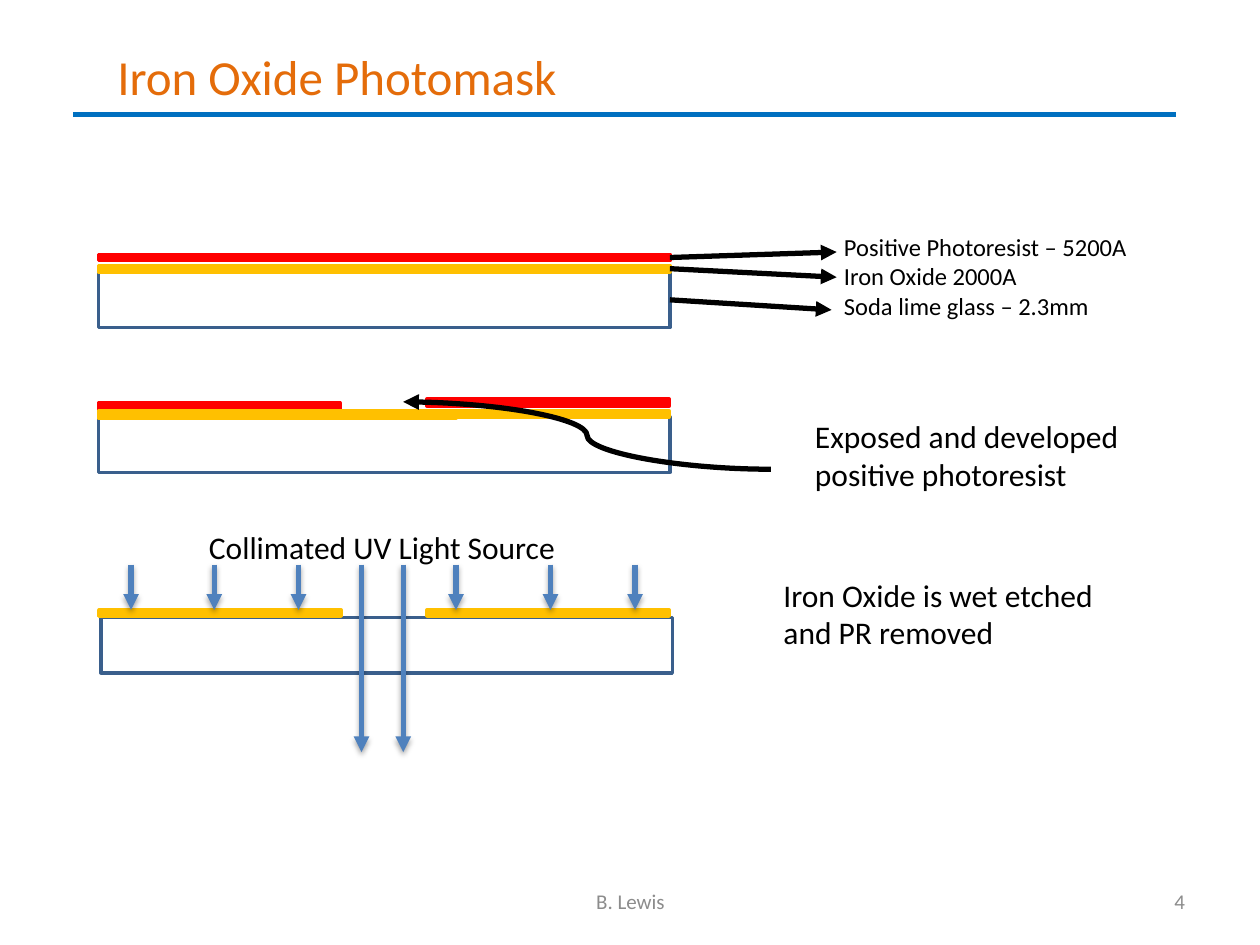
from dataclasses import dataclass

import pptx
import pptx.dml.color
import pptx.enum.shapes
import pptx.enum.text
import pptx.oxml
import pptx.oxml.ns
import pptx.util

Pt = pptx.util.Pt
Align = pptx.enum.text.PP_ALIGN
Anchor = pptx.enum.text.MSO_ANCHOR
Connector = pptx.enum.shapes.MSO_CONNECTOR
RECTANGLE = pptx.enum.shapes.MSO_SHAPE.RECTANGLE
RIGHT_SIDE = 3


@dataclass(frozen=True)
class Theme:
    font: str = "Calibri"
    title: str = "E46C0A"
    rule: str = "0070C0"
    text: str = "000000"
    muted: str = "8C8C8C"
    glass: str = "FFFFFF"
    glass_edge: str = "3A5F8C"
    resist: str = "FF0000"
    oxide: str = "FFC000"
    light: str = "4F81BD"
    title_size: int = 28
    note_size: int = 18
    label_size: int = 14
    footer_size: int = 12
    edge_width: int = 2
    line_width: int = 3


THEME = Theme()


@dataclass(frozen=True)
class Layer:
    left: float
    top: float
    width: float
    height: float
    fill: str
    edge: str


@dataclass(frozen=True)
class Note:
    lines: tuple[str, ...]
    left: float
    top: float
    width: float
    height: float
    size: int = THEME.note_size
    color: str = THEME.text
    align: Align = Align.LEFT
    anchor: Anchor = Anchor.TOP
    wrap: bool = True


@dataclass(frozen=True)
class Line:
    start: tuple[float, float]
    end: tuple[float, float]
    color: str = THEME.text
    kind: Connector = Connector.STRAIGHT
    arrow: bool = True
    shadow: bool = False


LEFT, WIDTH = 56.2, 326.6
RIGHT_PART, PART_WIDTH = 244.1, 138.3
GLASS_HEIGHT, FILM = 31.7, 3.7


def glass(left: float, top: float) -> Layer:
    return Layer(left, top, WIDTH, GLASS_HEIGHT, THEME.glass, THEME.glass_edge)


def film(left: float, top: float, width: float, color: str, height: float = FILM) -> Layer:
    return Layer(left, top, width, height, color, color)


BLANK_GLASS = glass(LEFT, 155.5)
BLANK_RESIST = film(LEFT, 145.3, WIDTH, THEME.resist)
BLANK_OXIDE = film(LEFT, 151.7, WIDTH, THEME.oxide)
LABEL_ARROWS = (
    (BLANK_GLASS, (475.2, 177.1)),
    (BLANK_OXIDE, (478.1, 158.4)),
    (BLANK_RESIST, (478.1, 144)),
)
ETCHED_MASK = (
    glass(57.6, 352.8),
    film(56.7, 348.5, PART_WIDTH, THEME.oxide),
    film(RIGHT_PART, 348.5, PART_WIDTH, THEME.oxide),
)
DEVELOPED_MASK = (
    glass(LEFT, 238.3),
    film(RIGHT_PART, 228, PART_WIDTH, THEME.resist, 4.2),
    film(RIGHT_PART, 234.7, PART_WIDTH, THEME.oxide),
    film(LEFT, 230.4, PART_WIDTH, THEME.resist),
    film(LEFT, 234.7, 204.5, THEME.oxide, 4.2),
)

LIGHT_TOP, MASK_TOP, BELOW_MASK = 322.6, 348.5, 429.8
PASSING_RAYS = (206.6, 230.4)
BLOCKED_RAYS = (74.9, 122.4, 170.6, 260.6, 314.6, 362.9)

NOTES = (
    Note(("Positive Photoresist – 5200A", "Iron Oxide 2000A", "Soda lime glass – 2.3mm"),
         475.2, 128.9, 192.2, 58.3, THEME.label_size),
    Note(("Collimated UV Light Source",), 112.3, 298.1, 214.6, 29, wrap=False),
    Note(("Iron Oxide is wet etched and PR removed",), 440.6, 325.4, 198, 51),
    Note(("Exposed and developed positive photoresist",), 458.6, 234.7, 198, 51),
    Note(("B. Lewis",), 246.2, 500.4, 228.2, 28.8, THEME.footer_size, THEME.muted,
         Align.CENTER, Anchor.MIDDLE),
    Note(("4",), 516.2, 500.4, 168, 28.8, THEME.footer_size, THEME.muted,
         Align.RIGHT, Anchor.MIDDLE),
)


def rgb(color: str) -> pptx.dml.color.RGBColor:
    return pptx.dml.color.RGBColor.from_string(color)


def set_all(target: object, values: dict[str, object]) -> None:
    for name, value in values.items():
        setattr(target, name, value)


def write_note(box, note: Note) -> None:
    frame = box.text_frame
    set_all(frame, {"word_wrap": note.wrap, "vertical_anchor": note.anchor,
                    "auto_size": pptx.enum.text.MSO_AUTO_SIZE.NONE})
    frame.text = "\n".join(note.lines)
    for para in frame.paragraphs:
        para.alignment = note.align
        for span in para.runs:
            set_all(span.font, {"name": THEME.font, "size": Pt(note.size)})
            span.font.color.rgb = rgb(note.color)


def add_note(page, note: Note) -> None:
    box = page.shapes.add_textbox(Pt(note.left), Pt(note.top), Pt(note.width), Pt(note.height))
    write_note(box, note)


def add_layer(page, layer: Layer):
    box = page.shapes.add_shape(RECTANGLE, Pt(layer.left), Pt(layer.top),
                                Pt(layer.width), Pt(layer.height))
    box.shadow.inherit = False
    box.fill.solid()
    box.fill.fore_color.rgb = rgb(layer.fill)
    box.line.color.rgb = rgb(layer.edge)
    box.line.width = Pt(THEME.edge_width)
    return box


def add_line(page, line: Line):
    connector = page.shapes.add_connector(line.kind, *map(Pt, line.start + line.end))
    connector.line.color.rgb = rgb(line.color)
    connector.line.width = Pt(THEME.line_width)
    namespace = pptx.oxml.ns.nsdecls("a")
    properties = connector._element.spPr
    if line.arrow:
        outline = properties.find(pptx.oxml.ns.qn("a:ln"))
        outline.append(pptx.oxml.parse_xml(f'<a:tailEnd {namespace} type="triangle"/>'))
    shadow = (
        f'<a:outerShdw blurRad="{Pt(3.1)}" dist="{Pt(1.8)}" dir="5400000" rotWithShape="0">'
        '<a:srgbClr val="000000"><a:alpha val="35000"/></a:srgbClr></a:outerShdw>'
    ) if line.shadow else ""
    properties.append(pptx.oxml.parse_xml(f"<a:effectLst {namespace}>{shadow}</a:effectLst>"))
    return connector


def add_title(page) -> None:
    title = page.shapes.title
    set_all(title, {"left": Pt(59.8), "top": Pt(23), "width": Pt(600), "height": Pt(41)})
    write_note(title, Note(("Iron Oxide Photomask",), 59.8, 23, 600, 41,
                           THEME.title_size, THEME.title))
    add_line(page, Line((41.8, 65.5), (671.8, 65.5), THEME.rule, arrow=False))


def main() -> None:
    deck = pptx.Presentation()
    set_all(deck, {"slide_width": Pt(720), "slide_height": Pt(540)})
    page = deck.slides.add_slide(deck.slide_layouts[5])
    add_title(page)

    for layer, tip in LABEL_ARROWS:
        box = add_layer(page, layer)
        start = (layer.left + layer.width, layer.top + layer.height / 2)
        add_line(page, Line(start, tip)).begin_connect(box, RIGHT_SIDE)

    for layer in ETCHED_MASK:
        add_layer(page, layer)
    for rays, bottom in ((PASSING_RAYS, BELOW_MASK), (BLOCKED_RAYS, MASK_TOP)):
        for x in rays:
            add_line(page, Line((x, LIGHT_TOP), (x, bottom), THEME.light, shadow=True))

    for layer in DEVELOPED_MASK:
        add_layer(page, layer)
    add_line(page, Line((440.6, 268.2), (230.4, 229.7), kind=Connector.CURVE))

    for note in NOTES:
        add_note(page, note)
    deck.save("out.pptx")


if __name__ == "__main__":
    main()
